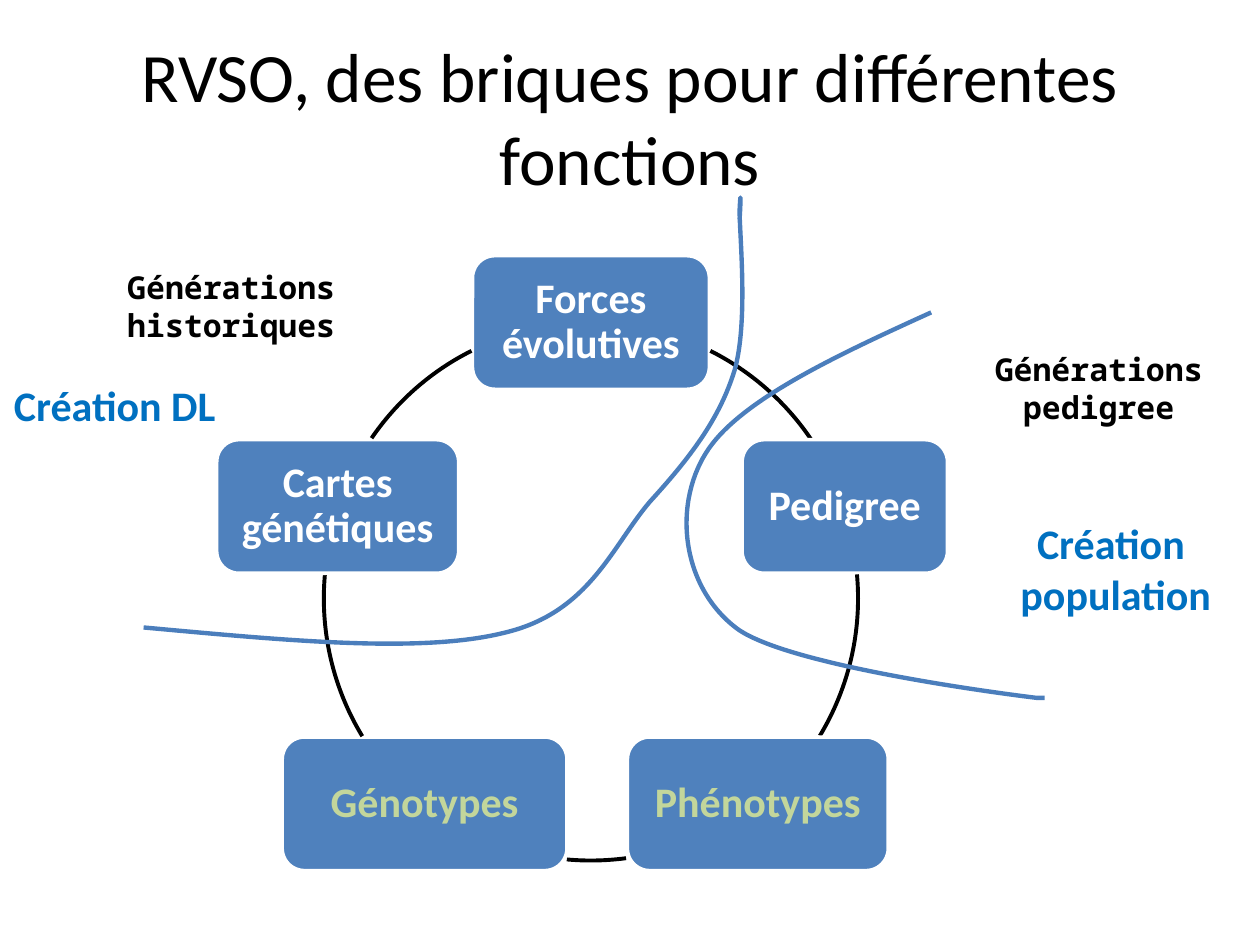
from dataclasses import dataclass

from lxml.etree import SubElement
from pptx import Presentation
from pptx.dml.color import RGBColor
from pptx.enum.shapes import MSO_SHAPE as Shape
from pptx.enum.text import MSO_ANCHOR as Anchor, MSO_AUTO_SIZE as AutoSize, PP_ALIGN as Align
from pptx.oxml.ns import qn
from pptx.slide import Slide
from pptx.util import Inches, Pt

# The slide is laid out on a grid of 100 columns by 75 rows.
SLIDE_W, SLIDE_H = Inches(10), Inches(7.5)
COL, ROW = SLIDE_W / 100, SLIDE_H / 75

BLACK = RGBColor(0x00, 0x00, 0x00)
WHITE = RGBColor(0xFF, 0xFF, 0xFF)
BRICK_BLUE = RGBColor(0x4F, 0x81, 0xBD)
BORDER_BLUE = RGBColor(0x4B, 0x7E, 0xBC)
LABEL_BLUE = RGBColor(0x00, 0x70, 0xC0)
DATA_GREEN = RGBColor(0xC3, 0xD6, 0x9B)

BRICK_HEIGHT = 10.6
RING_DIAMETER = 42.2

Point = tuple[float, float]


@dataclass(frozen=True)
class Brick:
    text: str
    col: float
    row: float
    cols: float
    color: RGBColor = WHITE


@dataclass(frozen=True)
class RingArc:
    """Part of the ring, with angles in degrees clockwise from the right."""
    col: float
    row: float
    start: float
    end: float


@dataclass(frozen=True)
class Label:
    lines: tuple[str, ...]
    col: float
    row: float
    cols: float
    rows: float
    size: int = 24
    font: str = "Calibri"
    color: RGBColor = LABEL_BLUE


BRICKS = (
    Brick("Forces évolutives", 37.5, 20.3, 18.8),
    Brick("Pedigree", 58.9, 34.9, 16.3),
    Brick("Phénotypes", 49.8, 58.5, 20.7, DATA_GREEN),
    Brick("Génotypes", 22.4, 58.5, 22.6, DATA_GREEN),
    Brick("Cartes génétiques", 17.2, 34.9, 19.2),
)
RING_ARCS = (
    RingArc(25.8, 25.6, 296.7, 325.8),
    RingArc(25.9, 26.4, 354.8, 31.1),
    RingArc(25.8, 26.1, 82.4, 95.2),
    RingArc(25.7, 26.4, 148.8, 185.2),
    RingArc(25.8, 25.6, 214.4, 243.3),
)
GENERATIONS = {"size": 18, "font": "Noto Sans Mono", "color": BLACK}
LABELS = (
    Label(("Générations", "pedigree"), 77.9, 27.3, 18.6, 6.6, **GENERATIONS),
    Label(("Générations", "historiques"), 9.1, 20.8, 18.5, 6.6, **GENERATIONS),
    Label(("Création DL",), 0, 29.6, 18.2, 5),
    Label(("Création ", "population"), 79.9, 40.6, 17.3, 9.1),
)
# Each border is a start point, then two control points and an end point per curve.
PEDIGREE_BORDER = (
    (73.9, 24.8),
    (66.2, 28.3), (58.5, 31.9), (56, 36),
    (53.4, 40.2), (54.1, 46.6), (58.5, 49.9),
    (62.9, 53.1), (82.3, 55.4), (82.3, 55.4),
    (82.3, 55.4), (82.9, 55.4), (82.9, 55.4),
)
HISTORY_BORDER = (
    (11.4, 49.8),
    (22.4, 50.8), (33.4, 51.9), (40.1, 50.2),
    (46.8, 48.6), (48.6, 43.3), (51.6, 39.8),
    (54.7, 36.4), (57.1, 33.3), (58.3, 29.4),
    (59.4, 25.6), (58.7, 18.7), (58.7, 16.7),
    (58.8, 14.7), (58.8, 16), (58.7, 17.4),
)


def grid_box(col: float, row: float, cols: float, rows: float) -> tuple[int, ...]:
    return round(col * COL), round(row * ROW), round(cols * COL), round(rows * ROW)


def set_attributes(target, values: dict) -> None:
    for name, value in values.items():
        setattr(target, name, value)


def write(paragraph, text: str, size: float, color: RGBColor,
          font: str = "Calibri", bold: bool = True) -> None:
    paragraph.alignment = Align.CENTER
    run = paragraph.add_run()
    run.text = text
    set_attributes(run.font, {"size": Pt(size), "name": font, "bold": bold})
    run.font.color.rgb = color


def outline(shape, color: RGBColor, width: float) -> None:
    shape.shadow.inherit = False
    shape.line.color.rgb = color
    shape.line.width = Pt(width)


def add_title(slide: Slide, text: str) -> None:
    title = slide.shapes.title
    left, top, width, height = grid_box(5, 3, 90, 12.5)
    set_attributes(title, {"left": left, "top": top, "width": width, "height": height})
    set_attributes(title.text_frame, {"auto_size": AutoSize.NONE, "word_wrap": True,
                                      "vertical_anchor": Anchor.MIDDLE})
    write(title.text_frame.paragraphs[0], text, 39.6, BLACK, bold=False)


def add_brick(slide: Slide, brick: Brick) -> None:
    box = grid_box(brick.col, brick.row, brick.cols, BRICK_HEIGHT)
    shape = slide.shapes.add_shape(Shape.ROUNDED_RECTANGLE, *box)
    outline(shape, WHITE, 2)
    shape.fill.solid()
    shape.fill.fore_color.rgb = BRICK_BLUE
    frame = shape.text_frame
    margins = ("margin_left", "margin_top", "margin_right", "margin_bottom")
    set_attributes(frame, dict.fromkeys(margins, Inches(0.1)))
    set_attributes(frame, {"word_wrap": True, "vertical_anchor": Anchor.MIDDLE})
    frame.paragraphs[0].line_spacing = 0.9
    write(frame.paragraphs[0], brick.text, 24, brick.color)


def add_ring_arc(slide: Slide, arc: RingArc) -> None:
    box = grid_box(arc.col, arc.row, RING_DIAMETER, RING_DIAMETER)
    shape = slide.shapes.add_shape(Shape.ARC, *box)
    # One degree is 60000 units, and an adjustment of 1 is 100000 units.
    for index, angle in enumerate((arc.start, arc.end)):
        shape.adjustments[index] = angle * 0.6
    shape.fill.background()
    outline(shape, BLACK, 2.25)


def add_border(slide: Slide, points: tuple[Point, ...]) -> None:
    """Draw a line of Bézier curves through a start point and point triples."""
    start, *others = [(round(x * COL), round(y * ROW)) for x, y in points]
    builder = slide.shapes.build_freeform(*start)
    builder.add_line_segments(others, close=False)
    shape = builder.convert_to_shape()
    segments = list(shape._element.iter(qn("a:lnTo")))
    outline_xml = segments[0].getparent()
    for first in range(0, len(segments), 3):
        curve = SubElement(outline_xml, qn("a:cubicBezTo"))
        for segment in segments[first:first + 3]:
            curve.append(segment[0])
            outline_xml.remove(segment)
    shape.fill.background()
    outline(shape, BORDER_BLUE, 2.5)


def add_label(slide: Slide, label: Label) -> None:
    box = grid_box(label.col, label.row, label.cols, label.rows)
    frame = slide.shapes.add_textbox(*box).text_frame
    set_attributes(frame, {"word_wrap": False, "auto_size": AutoSize.SHAPE_TO_FIT_TEXT})
    for number, line in enumerate(label.lines):
        paragraph = frame.add_paragraph() if number else frame.paragraphs[0]
        write(paragraph, line, label.size, label.color, label.font)


def main() -> None:
    presentation = Presentation()
    set_attributes(presentation, {"slide_width": SLIDE_W, "slide_height": SLIDE_H})
    slide = presentation.slides.add_slide(presentation.slide_layouts[5])
    add_title(slide, "RVSO, des briques pour différentes fonctions")
    for brick, arc in zip(BRICKS, RING_ARCS):
        add_brick(slide, brick)
        add_ring_arc(slide, arc)
    for border in (PEDIGREE_BORDER, HISTORY_BORDER):
        add_border(slide, border)
    for label in LABELS:
        add_label(slide, label)
    presentation.save("out.pptx")


if __name__ == "__main__":
    main()
